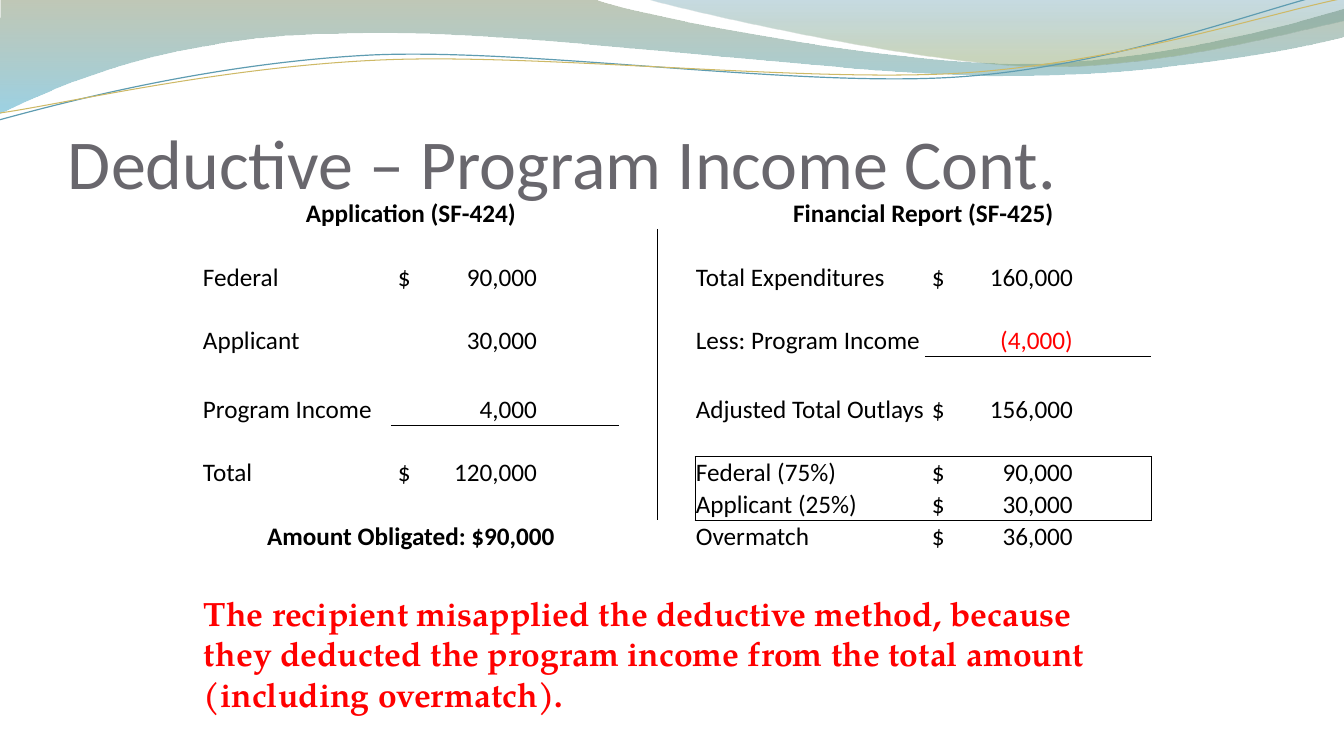
from dataclasses import dataclass

from lxml.etree import SubElement
from pptx import Presentation
from pptx.dml.color import RGBColor as RGB
from pptx.enum.text import MSO_ANCHOR as Anchor, PP_ALIGN as Align
from pptx.oxml import parse_xml
from pptx.oxml.ns import nsdecls, qn
from pptx.util import Pt


@dataclass(frozen=True)
class Theme:
    sans: str = "Calibri"
    serif: str = "TeX Gyre Pagella"
    title_size: int = 50
    table_size: int = 18
    note_size: int = 24
    title: str = "69676D"
    ink: str = "000000"
    alert: str = "FF0000"
    blue_line: str = "5E9CB1"
    gold_line: str = "CEB966"
    back_wave: tuple = ((0, "74855E", 45), (100, "4AACCE", 55))
    front_wave: tuple = ((0, "45889F", 30), (80, "8AA36D", 45))
    rule_width: float = 0.5


THEME = Theme()
NO_GRID_STYLE = "{2D5ABB26-0587-4C30-8999-92F81FD0307C}"

BACK_WAVE = [
    [(0, -1)], [(592, -1)],
    [(639, 17), (892, 64), (1019, 64)],
    [(1147, 64), (1288, 26), (1344, 9)],
    [(1345, 37)],
    [(1321, 44), (1169, 77), (1002, 76)],
    [(836, 76), (513, 28), (346, 34)],
    [(173, 35), (61, 84), (-1, 114)],
]
FRONT_WAVE = [
    [(644, -1)],
    [(684, 11), (916, 63), (1033, 66)],
    [(1150, 70), (1292, 32), (1344, 21)],
    [(1344, 0)],
]
BLUE_LINE = [
    [(-1, 120)],
    [(65, 102), (213, 63), (372, 55)],
    [(531, 48), (796, 88), (958, 77)],
    [(1119, 66), (1262, 8), (1342, -10)],
]
GOLD_LINE = [
    [(0, 113)],
    [(64, 104), (220, 67), (381, 60)],
    [(541, 53), (802, 83), (963, 73)],
    [(1124, 62), (1265, 14), (1345, -2)],
]

COLUMNS = [189, 228, 38, 38, 230, 226]
ROW_HEIGHTS = [32, 32, 32, 31, 32, 32, 37, 31, 32, 32, 32]
TABLE_ROWS = [
    ("Application (SF-424)", "", "Financial Report (SF-425)", ""),
    None,
    ("Federal", "$\t90,000", "Total Expenditures", "$\t160,000"),
    None,
    ("Applicant", "\t30,000", "Less: Program Income", "\t(4,000)"),
    None,
    ("Program Income", "\t4,000", "Adjusted Total Outlays", "$\t156,000"),
    None,
    ("Total", "$\t120,000", "Federal (75%)", "$\t90,000"),
    ("", "", "Applicant (25%)", "$\t30,000"),
    ("Amount Obligated: $90,000", "", "Overmatch", "$\t36,000"),
]
HEADINGS = [(0, 0), (0, 4), (10, 0)]
AMOUNT_COLUMNS = {1: 139, 5: 141}
AMOUNT_INDENT = 7
UNDERLINED = [(4, 5), (6, 1)]
BOXED_ROWS = (8, 9)


def px(n):
    return round(n * 914400 / 100.8)


def style_run(r, font, size, color, bold=False):
    r.font.name, r.font.size, r.font.bold = font, Pt(size), bold
    r.font.color.rgb = RGB.from_string(color)


def add_outline(s, x, y, segments, closed):
    points = [(px(x + a), px(y + b)) for seg in segments for a, b in seg]
    builder = s.shapes.build_freeform(*points[0])
    builder.add_line_segments(points[1:], close=closed)
    sp = builder.convert_to_shape()
    sp.shadow.inherit = False
    steps = iter(list(sp._element.spPr.iter(qn("a:lnTo"))))
    for seg in segments[1:]:
        first, *rest = [next(steps) for _ in seg]
        if rest:
            first.tag = qn("a:cubicBezTo")
            for step in rest:
                first.append(step[0])
                step.getparent().remove(step)
    return sp


def add_waves(s, x, y):
    for segments, stops in ((BACK_WAVE, THEME.back_wave), (FRONT_WAVE, THEME.front_wave)):
        sp = add_outline(s, x, y, segments, True)
        sp.line.fill.background()
        stop_xml = "".join(
            f'<a:gs pos="{pos * 1000}"><a:srgbClr val="{color}">'
            f'<a:alpha val="{alpha * 1000}"/></a:srgbClr></a:gs>'
            for pos, color, alpha in stops)
        gradient = parse_xml(f'<a:gradFill {nsdecls("a")} rotWithShape="1"><a:gsLst>{stop_xml}'
                             '</a:gsLst><a:lin ang="5400000" scaled="0"/></a:gradFill>')
        sp._element.spPr.find(qn("a:custGeom")).addnext(gradient)
    for segments, color, width in ((BLUE_LINE, THEME.blue_line, 0.85),
                                   (GOLD_LINE, THEME.gold_line, 0.75)):
        sp = add_outline(s, x, y, segments, False)
        sp.fill.background()
        sp.line.color.rgb = RGB.from_string(color)
        sp.line.width = Pt(width)


def add_text(s, x, y, w, h, text, font, size, color, bold=False):
    sp = s.shapes.add_textbox(px(x), px(y), px(w), px(h))
    tf = sp.text_frame
    tf.word_wrap = True
    tf.text = text
    style_run(tf.paragraphs[0].runs[0], font, size, color, bold)
    return tf


def add_title(s, x, y, w, h, text):
    tf = add_text(s, x, y, w, h, text, THEME.sans, THEME.title_size, THEME.title)
    tf.vertical_anchor = Anchor.BOTTOM
    tf.margin_left = tf.margin_right = tf.margin_bottom = 0


def set_borders(cell, sides):
    tcPr = cell._tc.get_or_add_tcPr()
    solid = f'<a:solidFill><a:srgbClr val="{THEME.ink}"/></a:solidFill>'
    for i, side in enumerate("LRTB"):
        fill = solid if side in sides else "<a:noFill/>"
        ln = parse_xml(f'<a:ln{side} {nsdecls("a")} w="{Pt(THEME.rule_width)}">'
                       f'{fill}</a:ln{side}>')
        tcPr.insert(i, ln)


def border_sides(row, col):
    sides = set()
    if 1 <= row <= 9 and col in (2, 3):
        sides.add("R" if col == 2 else "L")
    if (row, col) in UNDERLINED:
        sides.add("B")
    if (row - 1, col) in UNDERLINED:
        sides.add("T")
    first, last = BOXED_ROWS
    if col in (4, 5):
        if row in (first, last + 1):
            sides.add("T")
        if row in (first - 1, last):
            sides.add("B")
    if row in BOXED_ROWS and col in (3, 4, 5):
        sides.add("L" if col == 4 else "R")
    return sides


def fill_cell(cell, row, col, text):
    cell.fill.background()
    cell.vertical_anchor = Anchor.BOTTOM
    cell.margin_left = px(AMOUNT_INDENT if col in AMOUNT_COLUMNS else 1)
    cell.margin_top = px(1)
    cell.margin_right = cell.margin_bottom = 0
    set_borders(cell, border_sides(row, col))
    p = cell.text_frame.paragraphs[0]
    p.text = text
    if not text:
        SubElement(p._p, qn("a:endParaRPr"), sz=str(THEME.table_size * 100))
        return
    heading = (row, col) in HEADINGS
    if heading:
        p.alignment = Align.CENTER
    if "\t" in text:
        tabs = SubElement(p._p.get_or_add_pPr(), qn("a:tabLst"))
        SubElement(tabs, qn("a:tab"), pos=str(px(AMOUNT_COLUMNS[col])), algn="r")
    color = THEME.alert if "(4,000)" in text else THEME.ink
    style_run(p.runs[0], THEME.sans, THEME.table_size, color, heading)


def add_budget_table(s, x, y):
    table = s.shapes.add_table(len(ROW_HEIGHTS), len(COLUMNS), px(x), px(y),
                               px(sum(COLUMNS)), px(sum(ROW_HEIGHTS))).table
    table.first_row = table.horz_banding = False
    table._tbl.tblPr.find(qn("a:tableStyleId")).text = NO_GRID_STYLE
    for column, width in zip(table.columns, COLUMNS):
        column.width = px(width)
    for row, height in enumerate(ROW_HEIGHTS):
        table.rows[row].height = px(height)
        left, left_sum, right, right_sum = TABLE_ROWS[row] or ("",) * 4
        for col, text in enumerate((left, left_sum, "", "", right, right_sum)):
            fill_cell(table.cell(row, col), row, col, text)
    for row, col in HEADINGS:
        table.cell(row, col).merge(table.cell(row, col + 1))


def main():
    prs = Presentation()
    prs.slide_width, prs.slide_height = px(1344), px(756)
    s = prs.slides.add_slide(prs.slide_layouts[6])
    add_waves(s, 0, 0)
    add_title(s, 68, 78, 1221, 126, "Deductive – Program Income Cont.")
    add_budget_table(s, 202, 197)
    add_text(s, 194, 588, 940, 132,
             "The recipient misapplied the deductive method, because they deducted the program "
             "income from the total amount (including overmatch).",
             THEME.serif, THEME.note_size, THEME.alert, True)
    prs.save("out.pptx")


if __name__ == "__main__":
    main()
